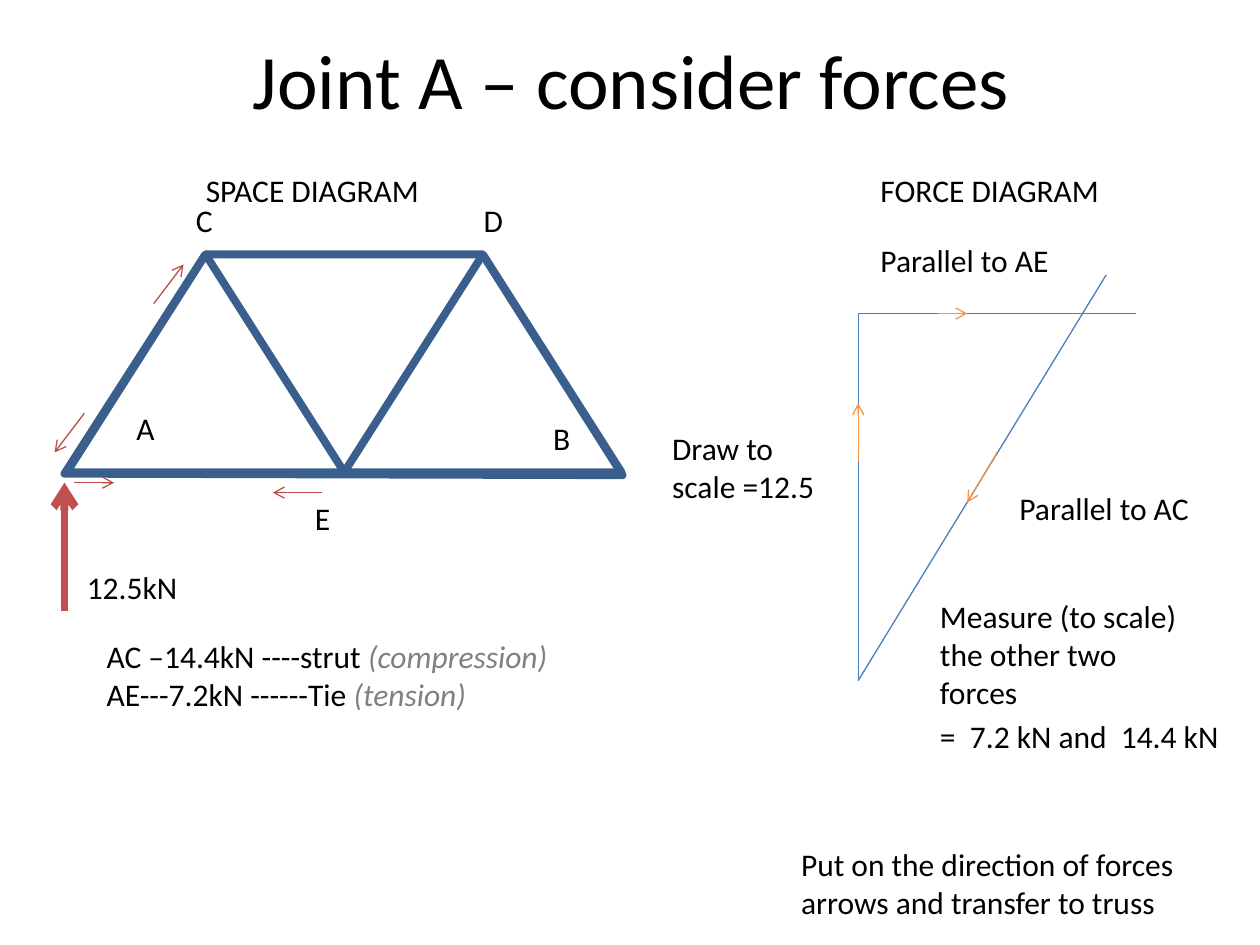
from lxml.etree import SubElement
from pptx import Presentation
from pptx.dml.color import RGBColor
from pptx.enum.shapes import MSO_CONNECTOR as Connector, MSO_SHAPE as Shape
from pptx.enum.text import MSO_ANCHOR as Anchor, PP_ALIGN as Align
from pptx.oxml.ns import qn
from pptx.util import Mm, Pt

COLUMNS, ROWS = 254, 190.5
UNIT = Mm(1)
FONT = "Calibri"
BLACK = RGBColor(0x00, 0x00, 0x00)
GREY = RGBColor(0x80, 0x80, 0x80)
TRUSS_BLUE = RGBColor(0x3A, 0x5F, 0x8C)
FORCE_BLUE = RGBColor(0x4B, 0x7E, 0xBC)
ORANGE = RGBColor(0xF6, 0x92, 0x40)
RED = RGBColor(0xBF, 0x4C, 0x48)
LOAD_RED = RGBColor(0xC0, 0x50, 0x4D)

THICK, THIN = 4.5, 0.75
LINE_ROWS = 10.2
LETTER_WIDTH = 20
TRUSS_TOP, PANEL_LEFT, PANEL_WIDTH, PANEL_HEIGHT = 51.3, 13.5, 55.9, 43.9
TRUSS_CORNERS = [(13, 95.5), (41.4, TRUSS_TOP), (97.3, TRUSS_TOP), (125.5, 95.8)]
FORCE_START, FORCE_CORNER = (173, 137.2), (173, 63.2)

FORCE_LINES = [
    (FORCE_START, FORCE_CORNER),
    (FORCE_START, (223, 55.4)),
    (FORCE_CORNER, (229, 63.2)),
]
FORCE_ARROWS = [
    ((189, 63.2), (195, 63.2)),
    ((201, 91.2), (195, 101.3)),
    ((173, 93.2), (173, 81.3)),
]
MEMBER_ARROWS = [
    ((15, 97.3), (23, 97.3)),
    ((17, 83.3), (11, 91.2)),
    ((65, 99.3), (55, 99.3)),
    ((31, 61.2), (37, 53.3)),
]
JOINTS = {"A": (25, 81.3), "C": (37, 39.3), "D": (95, 39.3), "E": (61, 99.3), "B": (109, 83.3)}
NOTES = [
    ("SPACE DIAGRAM", 39, 33.3, 58, 1),
    ("FORCE DIAGRAM", 175, 33.3, 56, 1),
    ("Parallel to AE", 175, 47.3, 44, 1),
    ("Parallel to AC", 203, 97.3, 44, 1),
    ("Draw to scale =12.5", 133, 85.3, 36, 2),
    ("12.5kN", 15, 113.2, 24, 1),
    ("Measure (to scale) the other two forces", 187, 119.2, 56, 3),
    ("=  7.2 kN and  14.4 kN", 187, 143.2, 62, 1),
    ("Put on the direction of forces arrows and transfer to truss", 159, 169.2, 82, 2),
]
RESULTS = [("AC –14.4kN ----strut ", "(compression)"), ("AE---7.2kN ------Tie ", "(tension)")]


def grid(*lengths):
    """Convert columns and rows to slide lengths."""
    return [round(length * UNIT) for length in lengths]


def style_span(span, size=18, color=BLACK, italic=False):
    """Set the font of one run."""
    span.font.name, span.font.size = FONT, Pt(size)
    span.font.color.rgb, span.font.italic = color, italic


def add_box(page, left, top, width, lines):
    """Add a wrapping text box tall enough for its lines."""
    box = page.shapes.add_textbox(*grid(left, top, width, lines * 7.7 + 2.5))
    box.text_frame.word_wrap = True
    return box


def add_note(page, text, left, top, width, lines=1):
    """Add a plain text note."""
    para = add_box(page, left, top, width, lines).text_frame.paragraphs[0]
    para.text = text
    style_span(para.runs[0])


def add_results(page):
    """Add the member forces, with the kind of force in grey italics."""
    frame = add_box(page, 19, 127.2, 114, len(RESULTS)).text_frame
    frame.text = "\n".join(force for force, _ in RESULTS)
    for para, (_, kind) in zip(frame.paragraphs, RESULTS):
        style_span(para.runs[0])
        span = para.add_run()
        span.text = kind
        style_span(span, color=GREY, italic=True)


def add_line(page, start, end, color, weight=THIN, arrow=False):
    """Add a straight line, with an open arrowhead at its end if asked."""
    line = page.shapes.add_connector(Connector.STRAIGHT, *grid(*start, *end))
    line.line.color.rgb, line.line.width = color, Pt(weight)
    if arrow:
        SubElement(line.line._get_or_add_ln(), qn("a:tailEnd"), type="arrow")
    SubElement(line._element.spPr, qn("a:effectLst"))


def style_member(shape):
    """Give a truss shape a thick outline without fill."""
    shape.shadow.inherit = False
    shape.fill.background()
    shape.line.color.rgb, shape.line.width = TRUSS_BLUE, Pt(THICK)


def add_truss(page):
    """Draw the two triangular panels and the outer frame."""
    for panel in range(2):
        left = PANEL_LEFT + panel * PANEL_WIDTH
        bounds = grid(left, TRUSS_TOP, PANEL_WIDTH, PANEL_HEIGHT)
        style_member(page.shapes.add_shape(Shape.ISOSCELES_TRIANGLE, *bounds))
    corners = [grid(*corner) for corner in TRUSS_CORNERS]
    outline = page.shapes.build_freeform(*corners[0])
    outline.add_line_segments(corners[1:], close=True)
    style_member(outline.convert_to_shape())


def set_title(page, text):
    """Place and format the title."""
    title = page.shapes.title
    title.left, title.top, title.width, title.height = grid(13, 0, 228.6, 31.75)
    title.text_frame.text = text
    title.text_frame.vertical_anchor = Anchor.MIDDLE
    para = title.text_frame.paragraphs[0]
    para.alignment = Align.CENTER
    style_span(para.runs[0], size=44)


def main():
    """Build and save the slide."""
    deck = Presentation()
    deck.slide_width, deck.slide_height = grid(COLUMNS, ROWS)
    page = deck.slides.add_slide(deck.slide_layouts[5])
    set_title(page, "Joint A – consider forces")
    add_truss(page)
    for start, end in FORCE_LINES:
        add_line(page, start, end, FORCE_BLUE)
    for arrows, color in ((FORCE_ARROWS, ORANGE), (MEMBER_ARROWS, RED)):
        for start, end in arrows:
            add_line(page, start, end, color, arrow=True)
    add_line(page, (13, 123.2), (13, 97.3), LOAD_RED, THICK, arrow=True)
    for joint, (left, top) in JOINTS.items():
        add_note(page, joint, left, top, LETTER_WIDTH)
    for note in NOTES:
        add_note(page, *note)
    add_results(page)
    deck.save("out.pptx")


if __name__ == "__main__":
    main()
